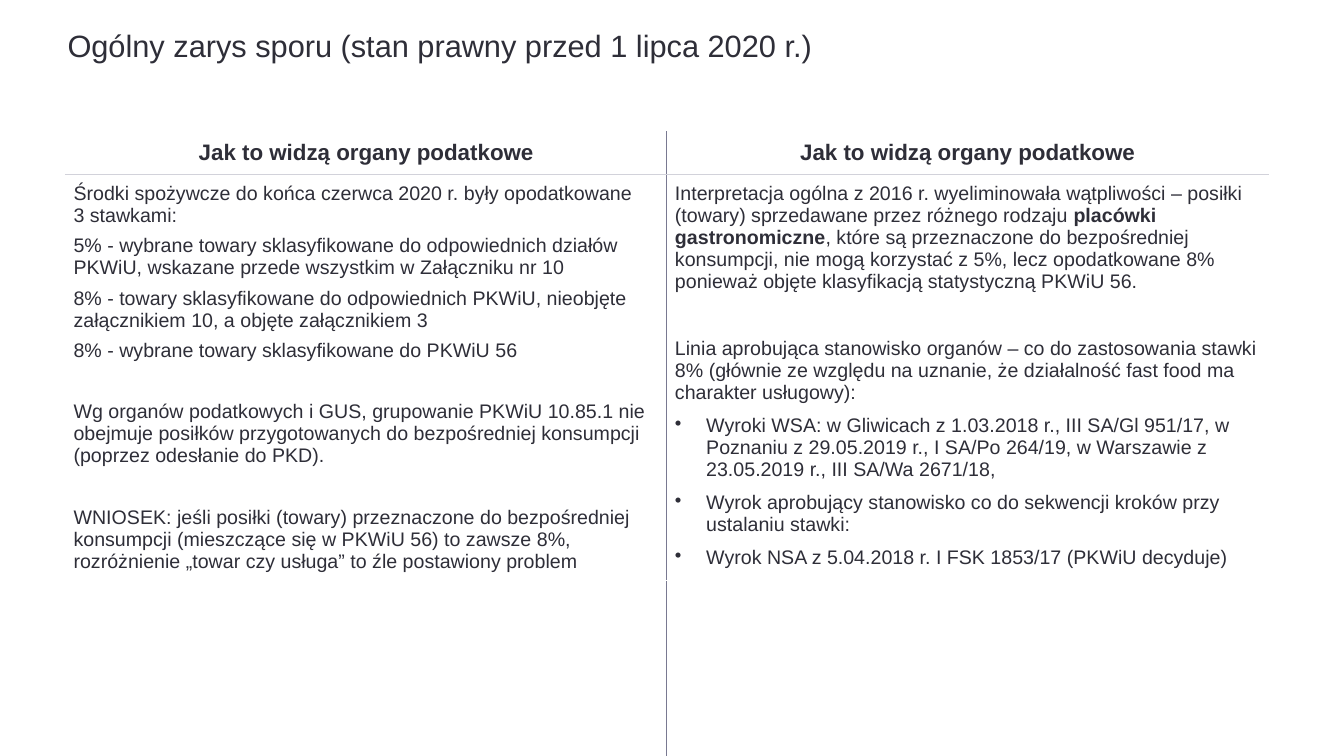
"""Build a slide that sets out the tax dispute in a two-column table."""
from dataclasses import dataclass

from lxml import etree
from pptx import Presentation
from pptx import util as u
from pptx.dml.color import RGBColor
from pptx.enum import text
from pptx.oxml import ns

INK = RGBColor(0x2E, 0x2E, 0x38)
DIVIDER = RGBColor(0x79, 0x79, 0x91)
RULE = RGBColor(0xD2, 0xD2, 0xDA)
WHITE = RGBColor(0xFF, 0xFF, 0xFF)
BULLET_INDENT = u.Inches(0.31)
MARGIN = u.Inches(0.08)
ROW_HEIGHTS = (0.42, 4, 1.97)
COLUMN_WIDTH = 5.97


@dataclass(frozen=True)
class Item:
    """One paragraph, with its bold part and line breaks marked."""
    words: str
    before: int = 0
    bullet: bool = False


@dataclass(frozen=True)
class Column:
    """One side of the table."""
    heading: str
    after: int
    items: tuple[Item, ...]


COLUMNS = (
    Column("Jak to widzą organy podatkowe", 6, (
        Item("Środki spożywcze do końca czerwca 2020 r. były opodatkowane \n3 stawkami:"),
        Item("5% - wybrane towary sklasyfikowane do odpowiednich działów PKWiU, "
             "wskazane przede wszystkim w Załączniku nr 10"),
        Item("8% - towary sklasyfikowane do odpowiednich PKWiU, nieobjęte "
             "załącznikiem 10, a objęte załącznikiem 3"),
        Item("8% - wybrane towary sklasyfikowane do PKWiU 56"),
        Item("Wg organów podatkowych i GUS, grupowanie PKWiU 10.85.1 nie obejmuje "
             "posiłków przygotowanych do bezpośredniej konsumpcji (poprzez odesłanie do PKD).",
             before=22),
        Item("WNIOSEK: jeśli posiłki (towary) przeznaczone do bezpośredniej konsumpcji "
             "(mieszczące się w PKWiU 56) to zawsze 8%, rozróżnienie „towar czy usługa” "
             "to źle postawiony problem", before=22),
    )),
    Column("Jak to widzą organy podatkowe", 8, (
        Item("Interpretacja ogólna z 2016 r. wyeliminowała wątpliwości – posiłki (towary) "
             "sprzedawane przez różnego rodzaju **placówki gastronomiczne**, które są "
             "przeznaczone do bezpośredniej konsumpcji, nie mogą korzystać z 5%, lecz "
             "opodatkowane 8% ponieważ objęte klasyfikacją statystyczną PKWiU 56."),
        Item("Linia aprobująca stanowisko organów – co do zastosowania stawki 8% (głównie "
             "ze względu na uznanie, że działalność fast food ma charakter usługowy):",
             before=24),
        Item("Wyroki WSA: w Gliwicach z 1.03.2018 r., III SA/Gl 951/17, "
             "w Poznaniu z 29.05.2019 r., I SA/Po 264/19, "
             "w Warszawie z 23.05.2019 r., III SA/Wa 2671/18,", bullet=True),
        Item("Wyrok aprobujący stanowisko co do sekwencji kroków przy ustalaniu stawki:",
             bullet=True),
        Item("Wyrok NSA z 5.04.2018 r. I FSK 1853/17 (PKWiU decyduje)", bullet=True),
    )),
)


def apply(target, values: dict) -> None:
    """Set each named attribute on the target."""
    for name, value in values.items():
        setattr(target, name, value)


def add_words(para, words: str, size: float, bold: bool = False) -> None:
    """Fill a paragraph, switching weight at ** and breaking at line ends."""
    for part, piece in enumerate(words.split("**")):
        for line, chunk in enumerate(piece.split("\n")):
            if line:
                para.add_line_break()
            span = para.add_run()
            span.text = chunk
            apply(span.font, {"name": "Arial", "size": u.Pt(size),
                              "bold": bold or part % 2 == 1})
            span.font.color.rgb = INK


def add_bullet(para) -> None:
    """Give a paragraph a round bullet and a hanging indent."""
    props = para._p.get_or_add_pPr()
    props.set("marL", str(BULLET_INDENT))
    props.set("indent", str(-BULLET_INDENT))
    etree.SubElement(props, ns.qn("a:buChar")).set("char", "•")


def add_border(cell, side: str, colour: RGBColor) -> None:
    """Draw one edge of a cell."""
    edge = etree.SubElement(cell._tc.get_or_add_tcPr(), ns.qn(f"a:ln{side}"))
    edge.set("w", str(u.Pt(0.75)))
    fill = etree.SubElement(edge, ns.qn("a:solidFill"))
    etree.SubElement(fill, ns.qn("a:srgbClr")).set("val", str(colour))


def format_cell(cell, row: int, column: int) -> None:
    """Set the margins, edges and fill of a cell."""
    apply(cell, {f"margin_{side}": MARGIN for side in ("left", "right", "top", "bottom")})
    add_border(cell, "L" if column else "R", DIVIDER)
    if row < 2:
        add_border(cell, "T" if row else "B", RULE)
    cell.fill.solid()
    cell.fill.fore_color.rgb = WHITE


def fill_column(table, index: int, column: Column) -> None:
    """Write the heading and the items of one column."""
    for row in range(len(ROW_HEIGHTS)):
        format_cell(table.cell(row, index), row, index)
    head = table.cell(0, index)
    head.vertical_anchor = text.MSO_ANCHOR.MIDDLE
    para = head.text_frame.paragraphs[0]
    apply(para, {"alignment": text.PP_ALIGN.CENTER, "space_after": u.Pt(6)})
    add_words(para, column.heading, 16, bold=True)
    frame = table.cell(1, index).text_frame
    for number, item in enumerate(column.items):
        para = frame.add_paragraph() if number else frame.paragraphs[0]
        if item.bullet:
            add_bullet(para)
        apply(para, {"space_before": u.Pt(item.before), "space_after": u.Pt(column.after)})
        add_words(para, item.words, 14)


def write_line(box, words: str, size: float, anchor, spacing: float) -> None:
    """Write a single left-aligned line in a box without margins."""
    frame = box.text_frame
    apply(frame, {"margin_left": 0, "margin_right": 0, "margin_top": 0,
                  "margin_bottom": 0, "word_wrap": True, "vertical_anchor": anchor,
                  "auto_size": text.MSO_AUTO_SIZE.NONE})
    para = frame.paragraphs[0]
    apply(para, {"alignment": text.PP_ALIGN.LEFT, "line_spacing": spacing})
    add_words(para, words, size)


def main() -> None:
    """Build and save the deck."""
    deck = Presentation()
    apply(deck, {"slide_width": u.Inches(13.34), "slide_height": u.Inches(7.5)})
    page = deck.slides.add_slide(deck.slide_layouts[5])
    title = page.shapes.title
    apply(title, {"left": u.Inches(0.67), "top": u.Inches(0.32),
                  "width": u.Inches(12.01), "height": u.Inches(0.65)})
    write_line(title, "Ogólny zarys sporu (stan prawny przed 1 lipca 2020 r.)", 22,
               text.MSO_ANCHOR.TOP, 0.85)
    number = page.shapes.add_textbox(u.Inches(0.68), u.Inches(7.08),
                                     u.Inches(0.73), u.Inches(0.2))
    write_line(number, "6", 8, text.MSO_ANCHOR.MIDDLE, 1.0)
    table = page.shapes.add_table(
        len(ROW_HEIGHTS), len(COLUMNS), u.Inches(0.65), u.Inches(1.31),
        u.Inches(COLUMN_WIDTH * len(COLUMNS)), u.Inches(sum(ROW_HEIGHTS))).table
    apply(table, {"first_row": False, "horz_banding": False})
    for row, height in zip(table.rows, ROW_HEIGHTS):
        row.height = u.Inches(height)
    for index, column in enumerate(COLUMNS):
        fill_column(table, index, column)
    deck.save("out.pptx")


if __name__ == "__main__":
    main()
